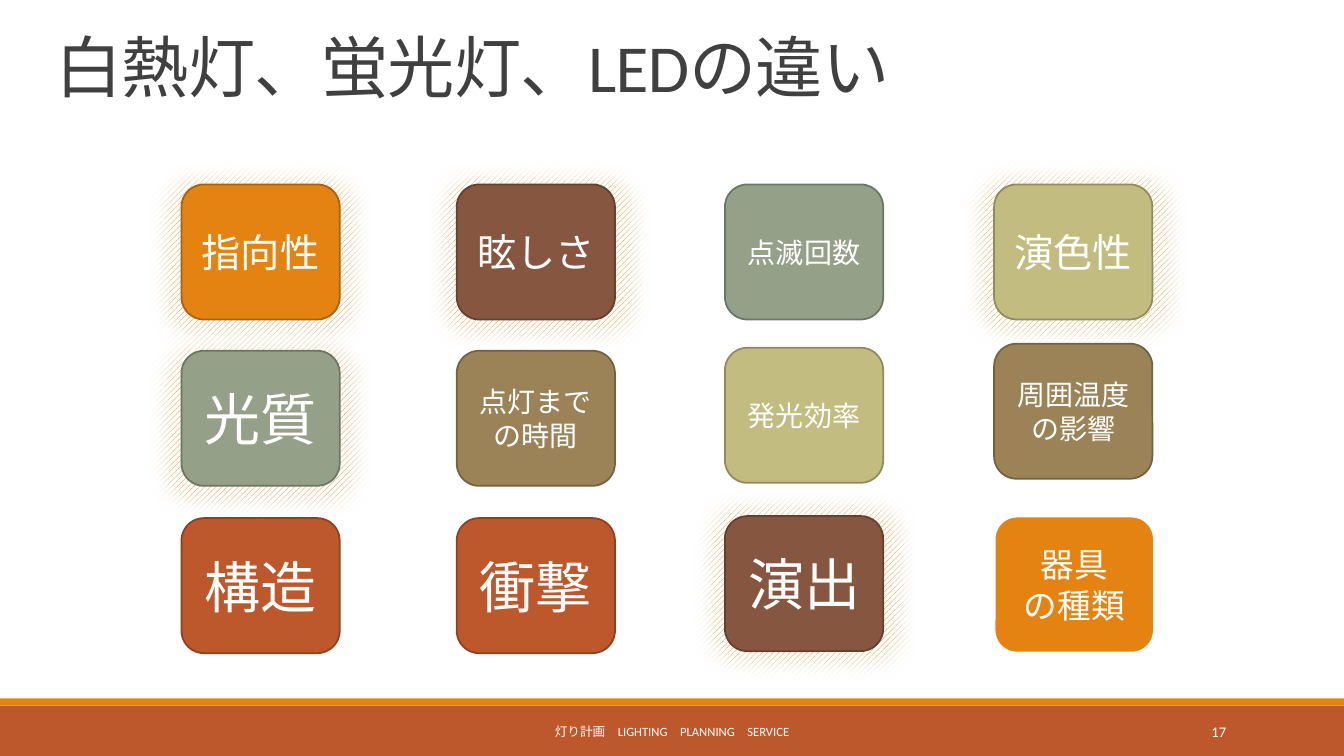
from lxml import etree
from pptx import Presentation
from pptx.dml.color import RGBColor
from pptx.enum.dml import MSO_PATTERN
from pptx.enum.lang import MSO_LANGUAGE_ID
from pptx.enum.shapes import MSO_SHAPE
from pptx.enum.text import MSO_ANCHOR, PP_ALIGN
from pptx.oxml.ns import qn
from pptx.util import Inches, Pt

RECTANGLE, ROUNDED = MSO_SHAPE.RECTANGLE, MSO_SHAPE.ROUNDED_RECTANGLE
LEFT, CENTER, RIGHT = PP_ALIGN.LEFT, PP_ALIGN.CENTER, PP_ALIGN.RIGHT
MIDDLE, BOTTOM = MSO_ANCHOR.MIDDLE, MSO_ANCHOR.BOTTOM
HATCH = MSO_PATTERN.WIDE_UPWARD_DIAGONAL
JAPANESE = MSO_LANGUAGE_ID.JAPANESE

color = RGBColor.from_string
ORANGE, RUST, BROWN = "E48312", "BD582C", "865640"
SAGE, OLIVE, TAN, WHITE = "94A088", "C2BC80", "9B8357", "FFFFFF"
OUTLINES = {ORANGE: "A9610D", RUST: "8C4121", BROWN: "63402F",
            SAGE: "6D7665", OLIVE: "908B5F", TAN: "736140"}


def write(box, text, size, font_color=WHITE, align=CENTER, anchor=MIDDLE):
    frame = box.text_frame
    frame.word_wrap = True
    frame.vertical_anchor = anchor
    frame.text = text
    for para in frame.paragraphs:
        para.alignment = align
        for span in para.runs:
            span.font.name = "Calibri"
            span.font.size = Pt(size)
            span.font.color.rgb = color(font_color)
            span.font.language_id = JAPANESE


def add_block(kind, left, top, width, height, fill=None, line=None, weight=1.25):
    """Add a shadowless shape; without a fill colour it gets the orange hatch."""
    block = page.shapes.add_shape(kind, Inches(left), Inches(top),
                                  Inches(width), Inches(height))
    block.shadow.inherit = False
    if fill:
        block.fill.solid()
        block.fill.fore_color.rgb = color(fill)
    else:
        block.fill.patterned()
        block.fill.pattern = HATCH
        block.fill.fore_color.rgb = color(ORANGE)
        block.fill.back_color.rgb = color(WHITE)
    if line:
        block.line.color.rgb = color(line)
        block.line.width = Pt(weight)
    else:
        block.line.fill.background()
    return block


deck = Presentation()
deck.slide_width, deck.slide_height = Inches(13.33), Inches(7.5)
page = deck.slides.add_slide(deck.slide_layouts[5])

# Footer band
add_block(RECTANGLE, 0, 7, 13.33, 0.5, RUST)
add_block(RECTANGLE, 0, 6.93, 13.33, 0.07, ORANGE)
for left, width, text, size, align in [
    (4.03, 5.27, "灯り計画　LIGHTING　PLANNING　SERVICE", 9, CENTER),
    (10.83, 1.43, "17", 10.5, RIGHT),
]:
    box = page.shapes.add_textbox(Inches(left), Inches(7.06), Inches(width), Inches(0.4))
    write(box, text, size, align=align)

# Title
title = page.shapes.title
title.left, title.top = Inches(0.45), Inches(0.27)
title.width, title.height = Inches(11), Inches(0.83)
write(title, "白熱灯、蛍光灯、LEDの違い", 48, "404040", LEFT, BOTTOM)
title_para = title.text_frame.paragraphs[0]
title_para.line_spacing = 0.85
title_para.runs[0].font._element.set("spc", "-50")

# Hatched glows behind the highlighted cards
for left, top in [(6.88, 4.86), (1.47, 3.27), (9.55, 1.59), (4.23, 1.6), (1.47, 1.6)]:
    glow = add_block(ROUNDED, left, top, 2.23, 1.89, line="FF0000")
    effects = glow._element.spPr.find(qn("a:effectLst"))
    etree.SubElement(effects, qn("a:softEdge"), rad=str(Pt(12.5)))

# Cards, column by column: top, text, size, fill
columns = [
    (1.8, [(1.83, "指向性", 28, ORANGE), (3.48, "光質", 40, SAGE),
           (5.14, "構造", 40, RUST)]),
    (4.53, [(1.83, "眩しさ", 28, BROWN), (3.48, "点灯までの時間", 20, TAN),
            (5.14, "衝撃", 40, RUST)]),
    (7.19, [(1.83, "点滅回数", 20, SAGE), (3.45, "発光効率", 20, OLIVE),
            (5.12, "演出", 40, BROWN)]),
    (9.86, [(1.83, "演色性", 28, OLIVE), (3.41, "周囲温度の影響", 20, TAN)]),
]
for left, cards in columns:
    for top, text, size, fill in cards:
        card = add_block(ROUNDED, left, top, 1.57, 1.34, fill, OUTLINES[fill])
        write(card, text, size)

fixture_card = add_block(ROUNDED, 9.86, 5.12, 1.59, 1.36, ORANGE, WHITE, 2)
write(fixture_card, "器具\nの種類", 24)

deck.save("out.pptx")
